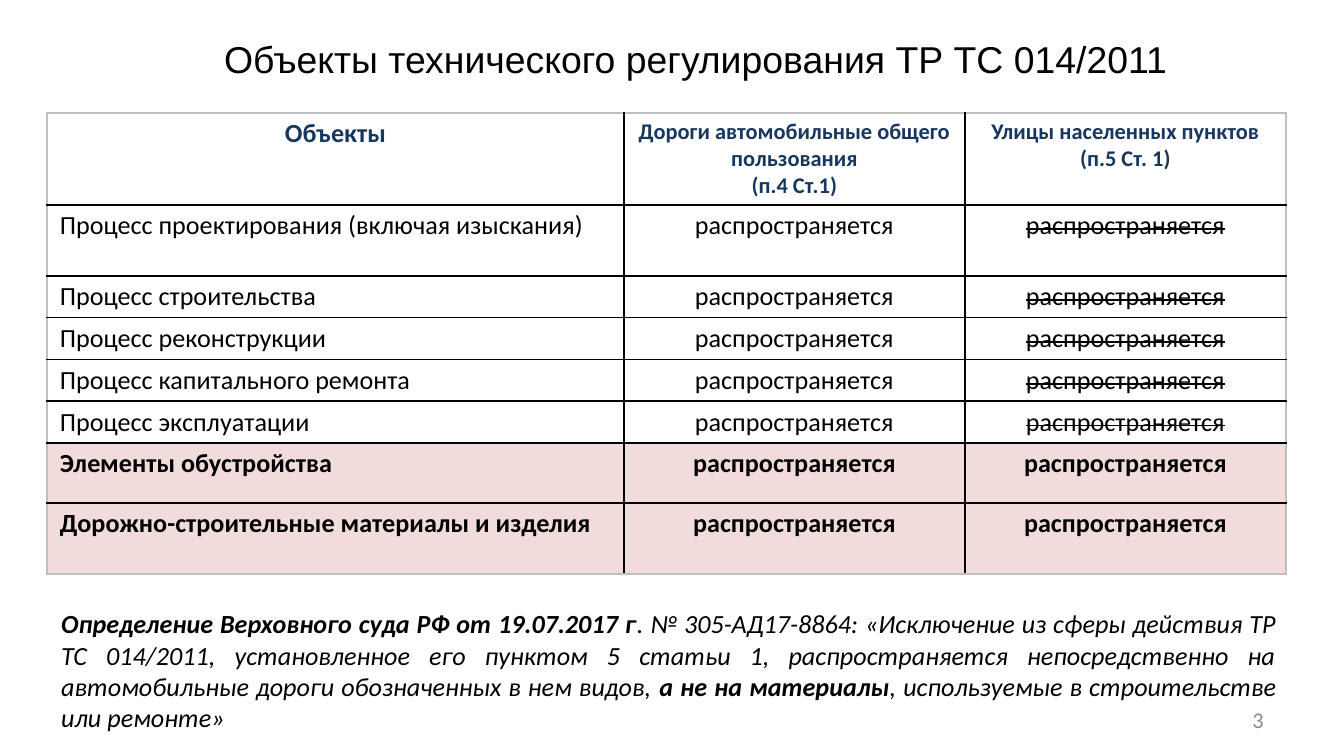
from dataclasses import dataclass

from lxml.etree import SubElement
from pptx import Presentation
from pptx.dml.color import RGBColor
from pptx.enum.text import MSO_ANCHOR, PP_ALIGN
from pptx.oxml.ns import qn
from pptx.util import Pt

EMU_PER_PIXEL = 914400 / 134.4
PAGE_WIDTH, PAGE_HEIGHT = 1344, 756
BLACK, NAVY, GREY, PINK, FRAME = "000000", "17375E", "8C8C8C", "F2DCDB", "BFBFBF"
APPLIES = "распространяется"


@dataclass
class Span:
    text: str
    size: int = 14
    font: str = "Calibri"
    color: str = BLACK
    bold: bool = False
    italic: bool = False
    strike: bool = False


@dataclass
class Box:
    left: int
    top: int
    width: int
    height: int
    spans: list[Span]
    align: PP_ALIGN
    anchor: MSO_ANCHOR = MSO_ANCHOR.TOP
    hanging: int = 0


@dataclass
class Row:
    height: int
    label: str
    strike: bool = False
    highlight: bool = False


def px(value: int) -> int:
    return round(value * EMU_PER_PIXEL)


def color(code: str) -> RGBColor:
    return RGBColor.from_string(code)


def write_paragraph(paragraph, spans: list[Span], align: PP_ALIGN) -> None:
    paragraph.alignment = align
    for span in spans:
        run = paragraph.add_run()
        run.text = span.text
        formats = {"name": span.font, "size": Pt(span.size),
                   "bold": span.bold, "italic": span.italic}
        for name, value in formats.items():
            setattr(run.font, name, value)
        run.font.color.rgb = color(span.color)
        if span.strike:
            run.font._element.set("strike", "sngStrike")


def draw_box(page, box: Box) -> None:
    shape = page.shapes.add_textbox(
        px(box.left), px(box.top), px(box.width), px(box.height))
    frame = shape.text_frame
    frame.word_wrap = True
    frame.vertical_anchor = box.anchor
    paragraph = frame.paragraphs[0]
    write_paragraph(paragraph, box.spans, box.align)
    if box.hanging:
        properties = paragraph._p.get_or_add_pPr()
        properties.set("marL", str(px(box.hanging)))
        properties.set("indent", str(-px(box.hanging)))


def draw_border(cell, side: str, code: str) -> None:
    line = SubElement(cell._tc.get_or_add_tcPr(), qn(f"a:{side}"), w=str(Pt(1)))
    fill = SubElement(line, qn("a:solidFill"))
    SubElement(fill, qn("a:srgbClr"), val=code)


def fill_cell(cell, lines: list[Span], align: PP_ALIGN,
              background: str | None, outer: dict[str, bool]) -> None:
    margins = {"margin_left": 13, "margin_right": 13, "margin_top": 5, "margin_bottom": 5}
    for name, value in margins.items():
        setattr(cell, name, px(value))
    for side, is_outer in outer.items():
        draw_border(cell, side, FRAME if is_outer else BLACK)
    if background:
        cell.fill.solid()
        cell.fill.fore_color.rgb = color(background)
    else:
        cell.fill.background()
    for index, span in enumerate(lines):
        frame = cell.text_frame
        paragraph = frame.add_paragraph() if index else frame.paragraphs[0]
        write_paragraph(paragraph, [span], align)


def draw_table(page, left: int, top: int, widths: list[int],
               header_height: int, header: list[list[Span]], rows: list[Row]) -> None:
    heights = [header_height] + [row.height for row in rows]
    table = page.shapes.add_table(
        len(heights), len(widths), px(left), px(top),
        px(sum(widths)), px(sum(heights))).table
    for column, width in zip(table.columns, widths):
        column.width = px(width)
    for table_row, height in zip(table.rows, heights):
        table_row.height = px(height)

    contents = [(header, None)]
    for row in rows:
        texts = [row.label, APPLIES, APPLIES]
        cells = [[Span(text, bold=row.highlight, strike=row.strike and position == 2)]
                 for position, text in enumerate(texts)]
        contents.append((cells, PINK if row.highlight else None))

    for r, (cells, background) in enumerate(contents):
        for c, lines in enumerate(cells):
            outer = {"lnL": c == 0, "lnR": c == len(widths) - 1,
                     "lnT": r == 0, "lnB": r == len(rows)}
            align = PP_ALIGN.LEFT if r and c == 0 else PP_ALIGN.CENTER
            fill_cell(table.cell(r, c), lines, align, background, outer)


def heading(text: str, size: int = 12) -> Span:
    return Span(text, size, color=NAVY, bold=True)


HEADER = [
    [heading("Объекты", 14)],
    [heading("Дороги автомобильные общего пользования"), heading("(п.4 Ст.1)")],
    [heading("Улицы населенных пунктов"), heading("(п.5 Ст. 1)")],
]
ROWS = [
    Row(71, "Процесс проектирования (включая изыскания)", strike=True),
    Row(41, "Процесс строительства", strike=True),
    Row(41, "Процесс реконструкции", strike=True),
    Row(41, "Процесс капитального ремонта", strike=True),
    Row(41, "Процесс эксплуатации", strike=True),
    Row(60, "Элементы обустройства", highlight=True),
    Row(71, "Дорожно-строительные материалы и изделия", highlight=True),
]
RULING = [
    Span("Определение Верховного суда РФ от 19.07.2017 г", bold=True, italic=True),
    Span(". № 305-АД17-8864: «Исключение из сферы действия ТР ТС 014/2011, "
         "установленное его пунктом 5 статьи 1, распространяется непосредственно "
         "на автомобильные дороги обозначенных в нем видов, ", italic=True),
    Span("а не на материалы", bold=True, italic=True),
    Span(", используемые в строительстве или ремонте»", italic=True),
]
BOXES = [
    Box(82, 30, 1228, 59,
        [Span("Объекты технического регулирования ТР ТС 014/2011", 20, "Arial")],
        PP_ALIGN.CENTER, hanging=50),
    Box(48, 601, 1242, 140, RULING, PP_ALIGN.JUSTIFY),
    Box(964, 700, 313, 40, [Span("3", 12, color=GREY)],
        PP_ALIGN.RIGHT, MSO_ANCHOR.MIDDLE),
]


def main() -> None:
    deck = Presentation()
    deck.slide_width, deck.slide_height = px(PAGE_WIDTH), px(PAGE_HEIGHT)
    page = deck.slides.add_slide(deck.slide_layouts[6])
    draw_table(page, 47, 113, [577, 341, 321], 91, HEADER, ROWS)
    for box in BOXES:
        draw_box(page, box)
    deck.save("out.pptx")


if __name__ == "__main__":
    main()
